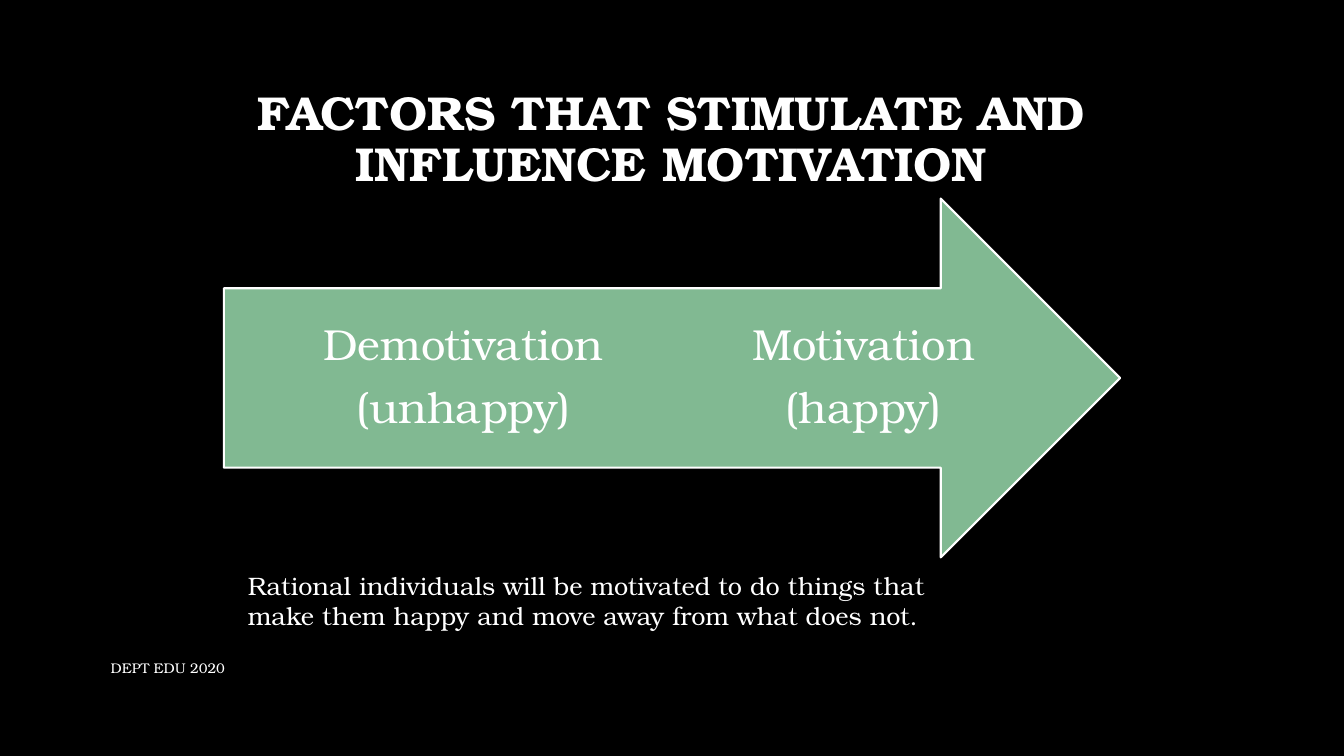
import pptx
import pptx.util
import pptx.dml.color
import pptx.enum.shapes
import pptx.enum.text

# Content
HEADING = "FACTORS THAT STIMULATE AND INFLUENCE MOTIVATION"
STATES = [("Demotivation", "(unhappy)"), ("Motivation", "(happy)")]
SUMMARY = ("Rational individuals will be motivated to do things that "
           "make them happy and move away from what does not.")
FOOTER = "DEPT EDU 2020"

# Look
BLACK = pptx.dml.color.RGBColor(0x00, 0x00, 0x00)
WHITE = pptx.dml.color.RGBColor(0xFF, 0xFF, 0xFF)
GREEN = pptx.dml.color.RGBColor(0x81, 0xB9, 0x92)
FONT = "TeX Gyre Bonum"
LEFT, CENTER = pptx.enum.text.PP_ALIGN.LEFT, pptx.enum.text.PP_ALIGN.CENTER
TOP, MIDDLE = pptx.enum.text.MSO_ANCHOR.TOP, pptx.enum.text.MSO_ANCHOR.MIDDLE
Inches, Pt = pptx.util.Inches, pptx.util.Pt


def set_all(target, values):
    for name, value in values.items():
        setattr(target, name, value)


def add_text(slide, box, lines, size, bold=False, anchor=MIDDLE, frame=None, **paragraph_format):
    words = slide.shapes.add_textbox(*map(Inches, box)).text_frame
    set_all(words, {"word_wrap": True, "vertical_anchor": anchor, **(frame or {})})
    words.text = "\n".join(lines)
    for paragraph in words.paragraphs:
        set_all(paragraph, paragraph_format)
        set_all(paragraph.font, {"name": FONT, "size": Pt(size), "bold": bold})
        paragraph.font.color.rgb = WHITE


def main():
    deck = pptx.Presentation()
    set_all(deck, {"slide_width": Inches(13.33), "slide_height": Inches(7.5)})
    slide = deck.slides.add_slide(deck.slide_layouts[6])
    slide.background.fill.solid()
    slide.background.fill.fore_color.rgb = BLACK

    # Heading and footer
    add_text(slide, (1, 0.67, 11.32, 1.45), [HEADING], 34, bold=True,
             alignment=CENTER, line_spacing=0.9)
    add_text(slide, (1, 6.43, 7.3, 0.4), [FOOTER], 10, alignment=LEFT)

    # Arrow from one state to the other
    left, top, width, height = 2.22, 1.97, 8.89, 3.56
    arrow = slide.shapes.add_shape(pptx.enum.shapes.MSO_SHAPE.RIGHT_ARROW,
                                   *map(Inches, (left, top, width, height)))
    arrow.shadow.inherit = False
    arrow.fill.solid()
    arrow.fill.fore_color.rgb = GREEN
    arrow.line.color.rgb = WHITE
    arrow.line.width = Pt(1.5)

    # States along the shaft, which is the middle half of the arrow
    state_width, gap = 3.31, 0.66
    first_left = left + 0.72
    insets = {"margin_left": 0, "margin_right": 0,
              "margin_top": Inches(0.34), "margin_bottom": Inches(0.34)}
    for column, state in enumerate(STATES):
        box = (first_left + column * (state_width + gap), top + height / 4,
               state_width, height / 2)
        add_text(slide, box, state, 31, frame=insets, alignment=CENTER,
                 line_spacing=0.9, space_after=Pt(11))

    # Summary below the arrow
    add_text(slide, (2.36, 5.61, 7.1, 0.71), [SUMMARY], 18, anchor=TOP, alignment=LEFT)

    deck.save("out.pptx")


if __name__ == "__main__":
    main()
